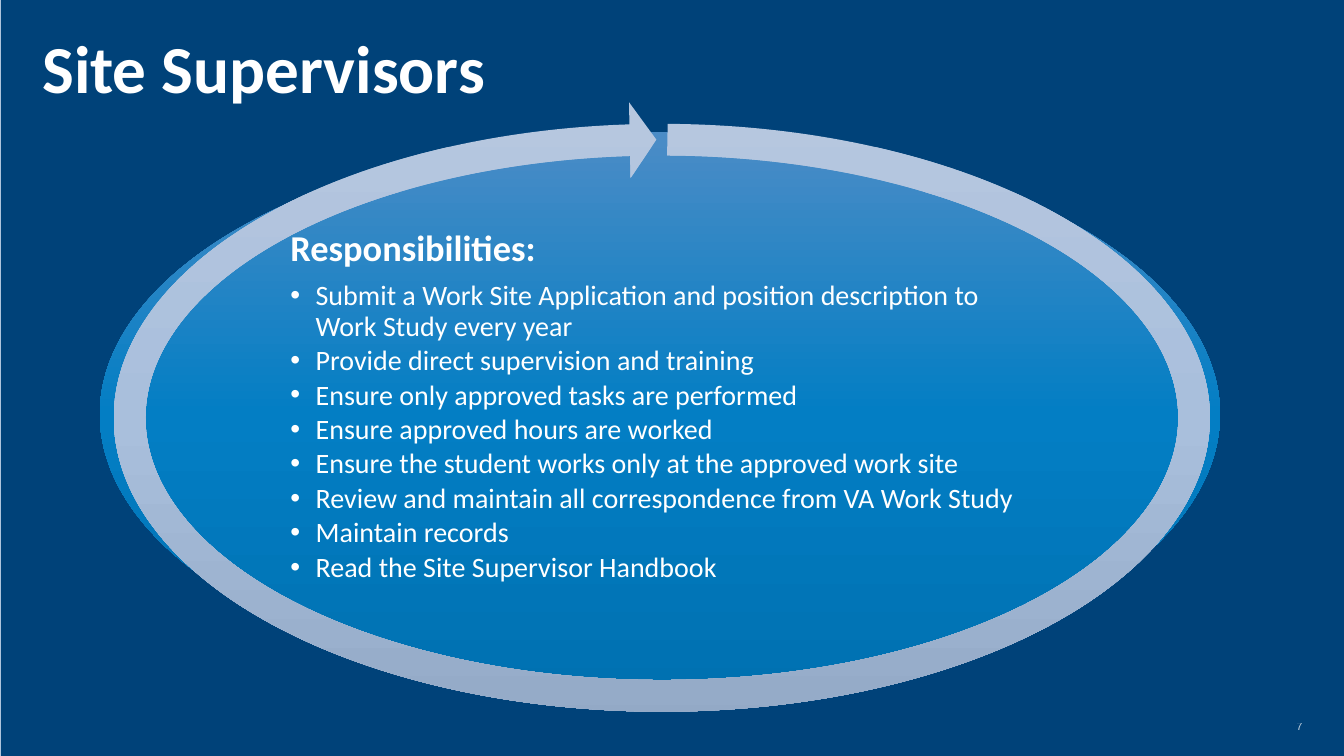
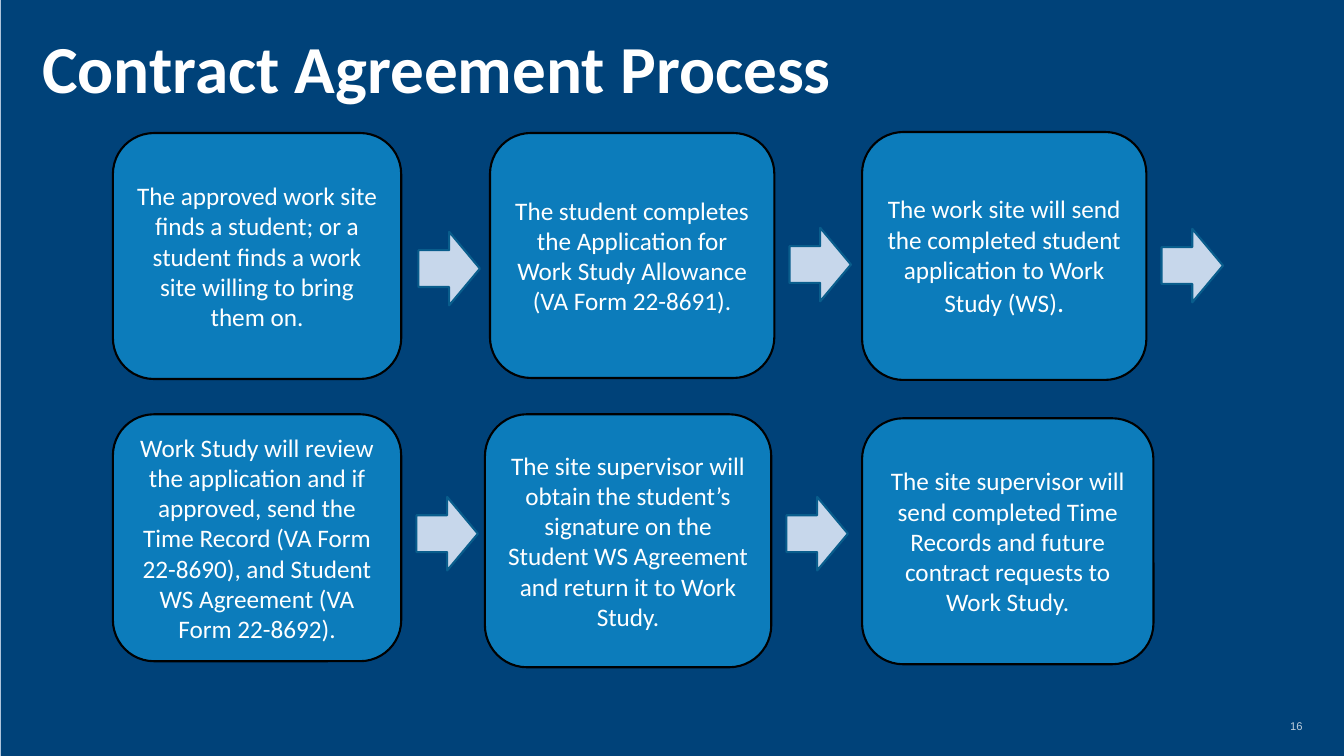
from dataclasses import dataclass

from lxml import etree
from pptx import Presentation
from pptx.dml.color import RGBColor
from pptx.enum.shapes import MSO_SHAPE
from pptx.enum.text import MSO_ANCHOR, PP_ALIGN
from pptx.oxml.ns import qn
from pptx.util import Inches, Pt

RECT, OVAL = MSO_SHAPE.RECTANGLE, MSO_SHAPE.OVAL
ROUND, ARROW = MSO_SHAPE.ROUNDED_RECTANGLE, MSO_SHAPE.RIGHT_ARROW
RING = MSO_SHAPE.CIRCULAR_ARROW
TOP, MIDDLE = MSO_ANCHOR.TOP, MSO_ANCHOR.MIDDLE
LEFT, RIGHT, CENTER = PP_ALIGN.LEFT, PP_ALIGN.RIGHT, PP_ALIGN.CENTER


@dataclass(frozen=True)
class Theme:
    """Colours, fonts and type sizes of the deck."""
    pale: str = "C7D7EB"
    navy: str = "004279"
    white: str = "FFFFFF"
    black: str = "000000"
    card: str = "0C7CBB"
    edge: str = "095D8C"
    oval: tuple = ("4B8CC6", "037EC4", "0071B1")
    ring: tuple = ("B6C7DF", "A9BFDC", "93A9C6")
    face: str = "Calibri"
    plain: str = "Arial"
    title: int = 48
    head: int = 26
    body: int = 20
    step: int = 18
    note: int = 8
    line: float = 1.5


LOOK = Theme()
PAGE = (0, 0, 13.33, 7.5)
DUTIES = [
    "Submit a Work Site Application and position description to Work Study every year",
    "Provide direct supervision and training",
    "Ensure only approved tasks are performed",
    "Ensure approved hours are worked",
    "Ensure the student works only at the approved work site",
    "Review and maintain all correspondence from VA Work Study",
    "Maintain records",
    "Read the Site Supervisor Handbook",
]
STEPS = [
    ((0, 0.01, 2.86, 2.44), ["The approved work site finds a student; or a student "
                             "finds a work site willing to bring them on."]),
    ((3.74, 0.01, 2.82, 2.43), ["The student completes the Application for Work Study "
                                "Allowance (VA Form 22-8691)."]),
    ((7.43, 0, 2.82, 2.46), ["The work site will send the completed student "
                             "application to Work Study (WS)", "."]),
    ((0, 2.8, 2.86, 2.45), ["Work Study will review the application and if approved, "
                            "send the Time Record (VA Form 22-8690), and Student WS "
                            "Agreement (VA Form 22-8692)."]),
    ((3.69, 2.8, 2.84, 2.51), ["The site supervisor will obtain the student’s signature "
                               "on the Student WS Agreement and return it to Work Study."]),
    ((7.43, 2.84, 2.89, 2.44), ["The site supervisor will send completed Time Records "
                                "and future contract requests to Work Study."]),
]
ARROWS = [(3.03, 0.99), (6.71, 0.95), (10.4, 0.96), (3.01, 3.62), (6.68, 3.62)]


def put(item, values):
    """Set each attribute named in a dict."""
    for name, value in values.items():
        setattr(item, name, value)


def inner(box, part):
    """Turn a part's place within a box into a place on the slide."""
    return (box[0] + part[0], box[1] + part[1], part[2], part[3])


def blend(shape, hues):
    """Fill a shape with evenly spaced colours from top to bottom."""
    shape.fill.gradient()
    shape.fill.gradient_angle = 270
    stops = shape._element.spPr.find(qn("a:gradFill")).find(qn("a:gsLst"))
    for stop in list(stops):
        stops.remove(stop)
    for i, hue in enumerate(hues):
        stop = etree.SubElement(stops, qn("a:gs"), pos=str(100000 * i // (len(hues) - 1)))
        etree.SubElement(stop, qn("a:srgbClr"), val=hue)


def draw(slide, kind, box, fill, line=None):
    """Add a preset shape with a flat or blended fill."""
    shape = slide.shapes.add_shape(kind, *map(Inches, box))
    shape.shadow.inherit = False
    if isinstance(fill, tuple):
        blend(shape, fill)
    else:
        shape.fill.solid()
        shape.fill.fore_color.rgb = RGBColor.from_string(fill)
    if line:
        shape.line.color.rgb = RGBColor.from_string(line)
        shape.line.width = Pt(LOOK.line)
    else:
        shape.line.fill.background()
    return shape


def say(para, text, size, bold=False, face=LOOK.face):
    """Add a white run to a paragraph."""
    run = para.add_run()
    run.text = text
    put(run.font, {"size": Pt(size), "bold": bold, "name": face})
    run.font.color.rgb = RGBColor.from_string(LOOK.white)
    return run


def label(slide, box, pad=0, anchor=TOP):
    """Add an empty wrapped text box and return its frame."""
    frame = slide.shapes.add_textbox(*map(Inches, box)).text_frame
    sides = ("left", "top", "right", "bottom")
    put(frame, {f"margin_{side}": Inches(pad) for side in sides})
    put(frame, {"word_wrap": True, "vertical_anchor": anchor})
    return frame


def base(deck, title, number):
    """Add a slide with its backdrop, title and page number."""
    slide = deck.slides.add_slide(deck.slide_layouts[6])
    slide.background.fill.solid()
    slide.background.fill.fore_color.rgb = RGBColor.from_string(LOOK.pale)
    draw(slide, RECT, inner(PAGE, (0.01, 0, 13.32, 7.5)), LOOK.navy)
    note = label(slide, inner(PAGE, (12.5, 7.09, 0.42, 0.23)), anchor=MIDDLE).paragraphs[0]
    note.alignment = RIGHT
    run = say(note, number, LOOK.note, face=LOOK.plain)
    for hue in run._r.iter(qn("a:srgbClr")):
        etree.SubElement(hue, qn("a:alpha"), val="75000")
    head = label(slide, inner(PAGE, (0.42, 0.42, 12.5, 1.08))).paragraphs[0]
    head.line_spacing = 0.8
    say(head, title, LOOK.title, True)
    return slide


def duty(frame, text):
    """Add one bulleted paragraph."""
    para = frame.add_paragraph()
    props = para._p.get_or_add_pPr()
    props.set("marL", str(Inches(0.25)))
    props.set("indent", str(-Inches(0.25)))
    etree.SubElement(props, qn("a:buFont"), typeface=LOOK.plain)
    etree.SubElement(props, qn("a:buChar"), char="•")
    put(para, {"line_spacing": 0.9, "space_after": Pt(3), "alignment": LEFT})
    say(para, text, LOOK.body)


def cycle(slide, box):
    """Place the oval, its list and the ring around it."""
    draw(slide, OVAL, inner(box, (0.08, 0.3, 11.11, 5.6)), LOOK.oval)
    frame = label(slide, inner(box, (1.93, 1.23, 7.41, 3.73)), 0.04)
    head = frame.paragraphs[0]
    put(head, {"line_spacing": 0.9, "space_after": Pt(9)})
    say(head, "Responsibilities:", LOOK.head, True)
    for text in DUTIES:
        duty(frame, text)
    ring = draw(slide, RING, box, LOOK.ring)
    for i, value in enumerate((0.05, 3.28, 158.04, 162.68, 0.06)):
        ring.adjustments[i] = value


def flow(slide, box):
    """Place the step cards and the arrows between them."""
    for part, texts in STEPS:
        card = draw(slide, ROUND, inner(box, part), LOOK.card, LOOK.black)
        put(card.text_frame, {"word_wrap": True, "vertical_anchor": MIDDLE})
        para = card.text_frame.paragraphs[0]
        para.alignment = CENTER
        for text, size in zip(texts, (LOOK.step, LOOK.body)):
            say(para, text, size)
    for left, top in ARROWS:
        draw(slide, ARROW, inner(box, (left, top, 0.61, 0.73)), LOOK.pale, LOOK.edge)


def main():
    """Build and save the deck."""
    deck = Presentation()
    put(deck, {"slide_width": Inches(PAGE[2]), "slide_height": Inches(PAGE[3])})
    cycle(base(deck, "Site Supervisors", "7"), (0.91, 1.01, 11.31, 6.27))
    flow(base(deck, "Contract Agreement Process", "16"), (1.12, 1.31, 11.01, 5.31))
    deck.save("out.pptx")


if __name__ == "__main__":
    main()
